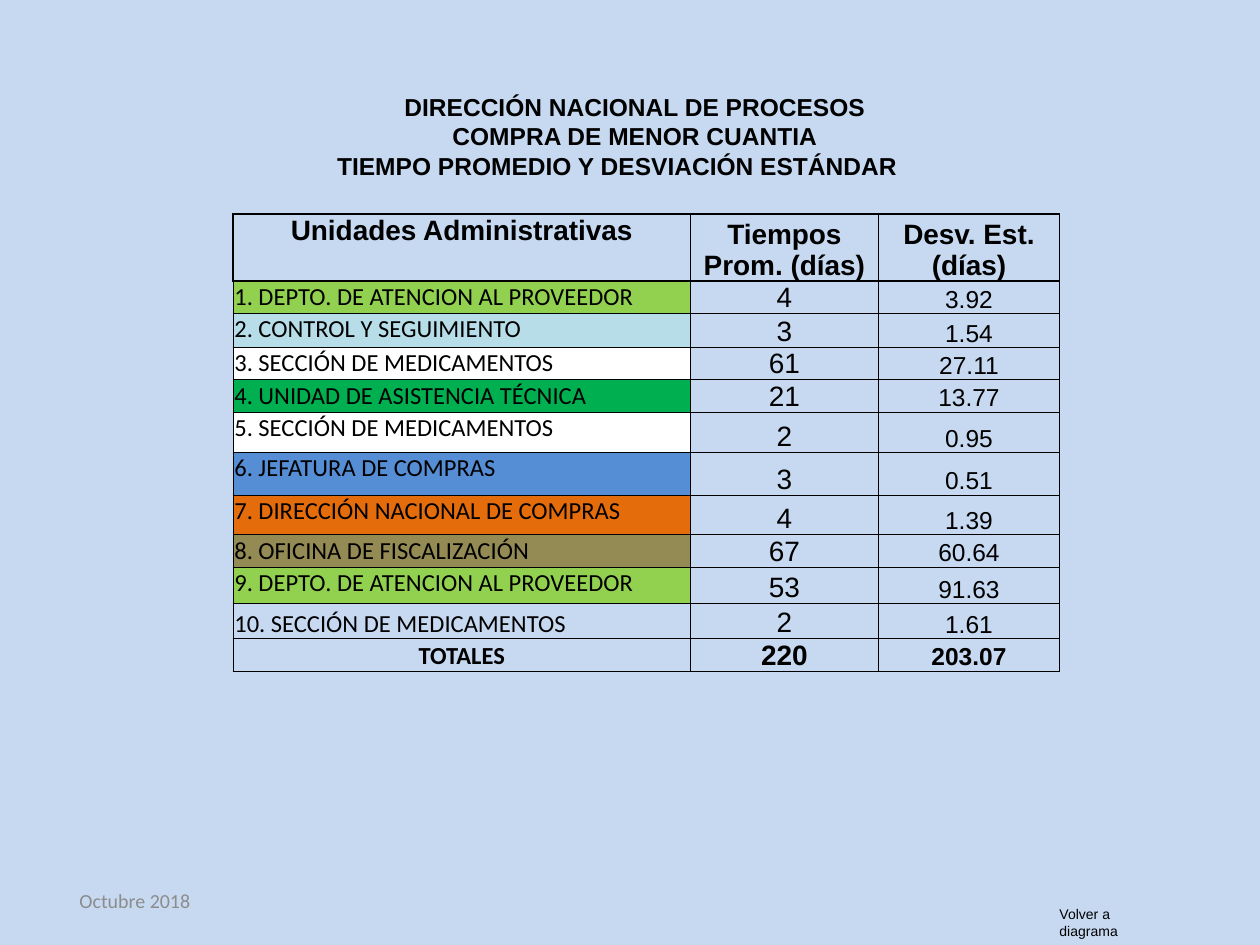
import pptx
import pptx.util
import pptx.dml.color
import pptx.enum.text
import lxml.etree

Pt = pptx.util.Pt
ALIGN = pptx.enum.text.PP_ALIGN
ANCHOR = pptx.enum.text.MSO_ANCHOR

COLORS = {
    "background": "C6D9F1", "ink": "000000", "footer": "8C8C8C",
    "supplier": "92D050", "control": "B7DEE8", "medicines": "FFFFFF",
    "technical": "00B050", "purchasing": "558ED5", "national": "E46C0A",
    "audit": "948A54",
}

# Content: unit, mean days, standard deviation, unit colour, row height
HEADINGS = ["Unidades Administrativas", "Tiempos Prom. (días)", "Desv. Est.\n(días)"]
HEADING_HEIGHT = 38.2
UNITS = [
    ("1. DEPTO. DE ATENCION AL PROVEEDOR", "4", "3.92", "supplier", 14.4),
    ("2. CONTROL Y SEGUIMIENTO", "3", "1.54", "control", 19.4),
    ("3. SECCIÓN DE MEDICAMENTOS", "61", "27.11", "medicines", 17.3),
    ("4. UNIDAD DE ASISTENCIA TÉCNICA", "21", "13.77", "technical", 16.6),
    ("5. SECCIÓN DE MEDICAMENTOS", "2", "0.95", "medicines", 23),
    ("6. JEFATURA DE COMPRAS", "3", "0.51", "purchasing", 24.5),
    ("7. DIRECCIÓN NACIONAL DE COMPRAS", "4", "1.39", "national", 22.5),
    ("8. OFICINA DE FISCALIZACIÓN", "67", "60.64", "audit", 15.8),
    ("9. DEPTO. DE ATENCION AL PROVEEDOR", "53", "91.63", "supplier", 20.9),
    ("10. SECCIÓN DE MEDICAMENTOS", "2", "1.61", None, 20.2),
    ("TOTALES", "220", "203.07", None, 15.1),
]
COLUMN_WIDTHS = [261.4, 107.3, 103.7]
TABLE_LEFT, TABLE_TOP = 133.2, 122.4

# Text, box (left, top, width, height), format
CENTERED_TITLE = dict(size=14, bold=True, align=ALIGN.CENTER)
LABELS = [
    ("TIEMPO PROMEDIO Y DESVIACIÓN ESTÁNDAR", (10, 82.8, 685.4, 24.5), CENTERED_TITLE),
    ("DIRECCIÓN NACIONAL DE PROCESOS\nCOMPRA DE MENOR CUANTIA",
     (127.4, 49, 470.9, 41), CENTERED_TITLE),
    ("Volver a diagrama", (598.3, 514.1, 73.4, 17.3), dict(size=8)),
    ("Octubre 2018", (36, 500.4, 167.8, 28.8),
     dict(size=11.4, font="Calibri", color="footer", anchor=ANCHOR.MIDDLE,
          margins=(9.4, 5))),
]


def rgb(name):
    return pptx.dml.color.RGBColor.from_string(COLORS[name])


def write(frame, text, size=14, font="Arial", color="ink", bold=False, align=ALIGN.LEFT):
    frame.word_wrap = True
    for number, line in enumerate(text.split("\n")):
        paragraph = frame.add_paragraph() if number else frame.paragraphs[0]
        paragraph.alignment = align
        run = paragraph.add_run()
        run.text = line
        run.font.size, run.font.name, run.font.bold = Pt(size), font, bold
        run.font.color.rgb = rgb(color)


def add_label(slide, text, box, anchor=ANCHOR.TOP, margins=(7.2, 3.6), **style):
    frame = slide.shapes.add_textbox(*map(Pt, box)).text_frame
    frame.vertical_anchor = anchor
    frame.margin_left = frame.margin_right = Pt(margins[0])
    frame.margin_top = frame.margin_bottom = Pt(margins[1])
    write(frame, text, **style)


def draw_borders(cell, top, others):
    properties = cell._tc.get_or_add_tcPr()
    namespace = "{http://schemas.openxmlformats.org/drawingml/2006/main}"
    for side, width in (("L", others), ("R", others), ("T", top), ("B", others)):
        border = lxml.etree.SubElement(properties, namespace + "ln" + side, w=str(Pt(width)))
        fill = lxml.etree.SubElement(border, namespace + "solidFill")
        lxml.etree.SubElement(fill, namespace + "srgbClr", val=COLORS["ink"])


def fill_cell(cell, text, anchor, fill=None, top=0.5, others=0.5, **style):
    cell.margin_left = cell.margin_right = cell.margin_top = Pt(0.72)
    cell.margin_bottom = 0
    cell.vertical_anchor = anchor
    draw_borders(cell, top, others)
    if fill:
        cell.fill.solid()
        cell.fill.fore_color.rgb = rgb(fill)
    else:
        cell.fill.background()
    write(cell.text_frame, text, **style)


def add_times_table(slide):
    heights = [HEADING_HEIGHT] + [unit[-1] for unit in UNITS]
    table = slide.shapes.add_table(
        len(heights), len(COLUMN_WIDTHS), Pt(TABLE_LEFT), Pt(TABLE_TOP),
        Pt(sum(COLUMN_WIDTHS)), Pt(sum(heights))).table
    table.first_row = table.horz_banding = False
    for column, width in zip(table.columns, COLUMN_WIDTHS):
        column.width = Pt(width)
    for row, height in zip(table.rows, heights):
        row.height = Pt(height)

    # Heading row
    for column, heading in enumerate(HEADINGS):
        fill_cell(table.cell(0, column), heading, ANCHOR.BOTTOM if column else ANCHOR.TOP,
                  top=1, others=1, size=16, bold=True, align=ALIGN.CENTER)

    # Units and totals
    for row, (unit, mean, deviation, color, _) in enumerate(UNITS, 1):
        total = row == len(UNITS)
        shared = dict(top=1 if row == 1 else 0.5, bold=total)
        fill_cell(table.cell(row, 0), unit, ANCHOR.TOP if color else ANCHOR.BOTTOM,
                  fill=color, font="Calibri",
                  align=ALIGN.CENTER if total else ALIGN.LEFT, **shared)
        for column, (value, size) in enumerate(((mean, 16), (deviation, 14)), 1):
            fill_cell(table.cell(row, column), value, ANCHOR.BOTTOM, size=size,
                      align=ALIGN.CENTER, **shared)


def main():
    deck = pptx.Presentation()
    deck.slide_width, deck.slide_height = Pt(720), Pt(540)
    slide = deck.slides.add_slide(deck.slide_layouts[6])
    slide.background.fill.solid()
    slide.background.fill.fore_color.rgb = rgb("background")
    add_times_table(slide)
    for text, box, style in LABELS:
        add_label(slide, text, box, **style)
    deck.save("out.pptx")


if __name__ == "__main__":
    main()
